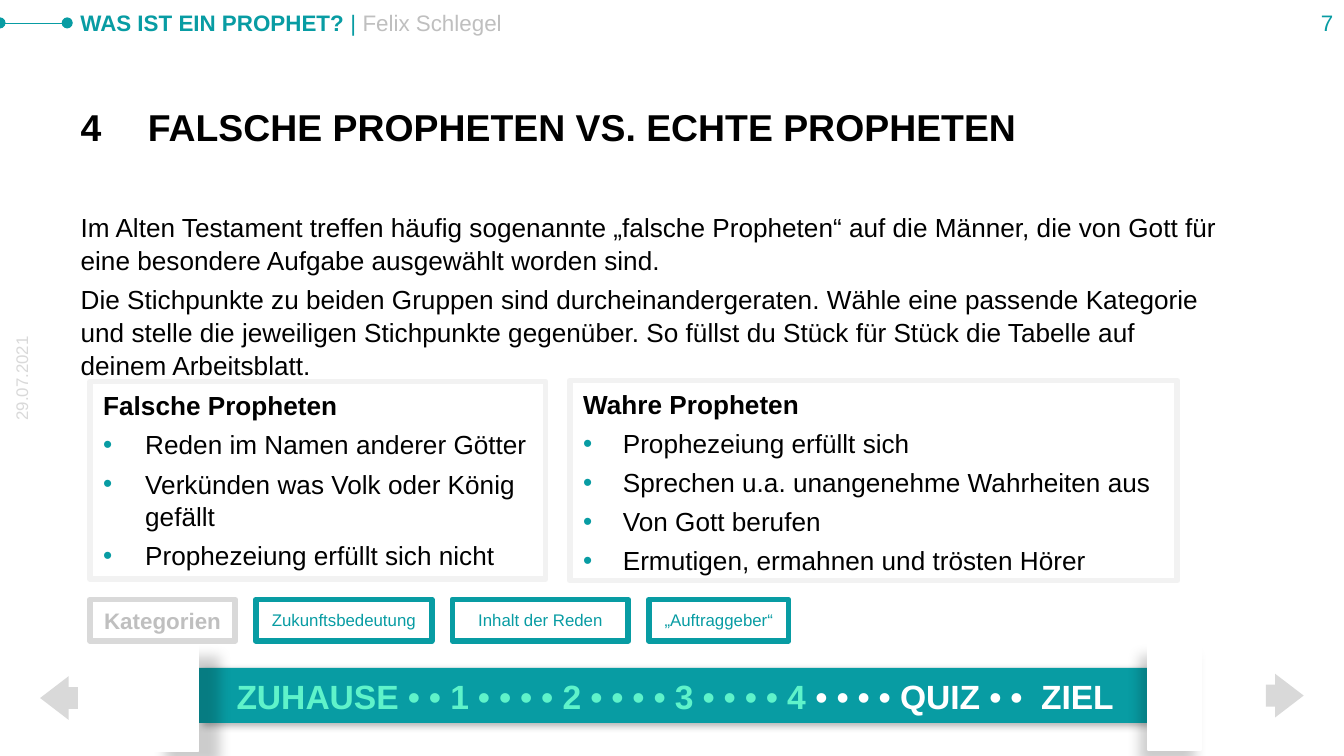
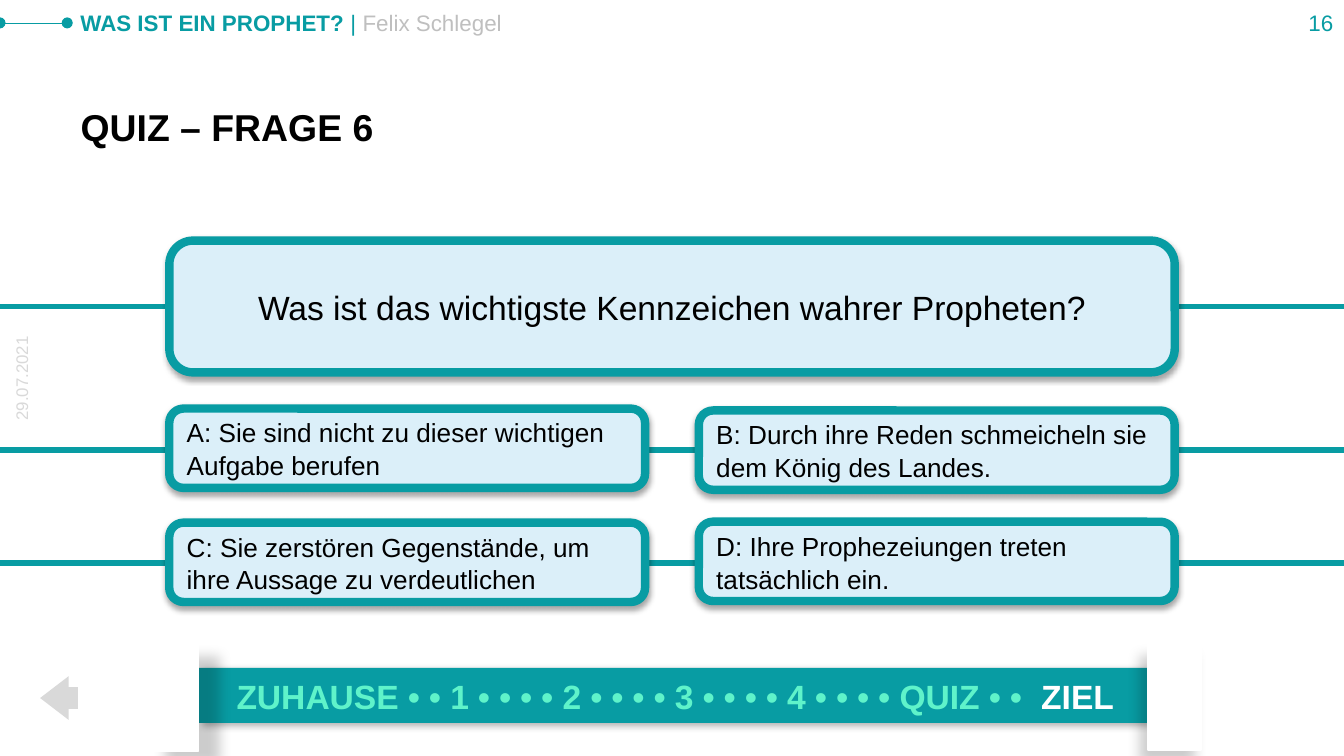
"""Build two slides of a lesson on prophets: a comparison and a quiz question."""
from lxml import etree
from pptx import Presentation
from pptx.dml.color import RGBColor
from pptx.enum.shapes import MSO_CONNECTOR, MSO_SHAPE
from pptx.enum.text import MSO_ANCHOR, MSO_AUTO_SIZE, PP_ALIGN
from pptx.oxml.ns import qn
from pptx.util import Pt

LEFT, MID, RIGHT = PP_ALIGN.LEFT, PP_ALIGN.CENTER, PP_ALIGN.RIGHT
TOP, CENTER, BOTTOM = MSO_ANCHOR.TOP, MSO_ANCHOR.MIDDLE, MSO_ANCHOR.BOTTOM
RECT, ROUND = MSO_SHAPE.RECTANGLE, MSO_SHAPE.ROUNDED_RECTANGLE
BACK, NEXT = MSO_SHAPE.LEFT_ARROW, MSO_SHAPE.RIGHT_ARROW
STRAIGHT = MSO_CONNECTOR.STRAIGHT
NO_FIT = MSO_AUTO_SIZE.NONE

FONT = "Arial"
COLORS = {
    "teal": "089CA3", "mint": "5FF3CA", "sky": "DBEFF9", "white": "FFFFFF",
    "black": "000000", "gray": "BFBFBF", "light": "D9D9D9", "pale": "F2F2F2",
}


def rgb(name):
    return RGBColor.from_string(COLORS[name])


def add(parent, tag, **attrs):
    return etree.SubElement(parent, qn(tag), attrs)


class Deck:
    """Holds the shared style and the current slide."""

    def __init__(self):
        self.show = Presentation()
        self.show.slide_width, self.show.slide_height = Pt(720), Pt(405)
        self.slide = None

    def start(self, layout, title, page, onward):
        self.slide = self.show.slides.add_slide(self.show.slide_layouts[layout])
        self.frame(page, onward)
        head = self.place(self.slide.shapes.title, (36, 23.8, 648.7, 59.8))
        self.letter(head.text_frame, [title], 20, bold=True, anchor=BOTTOM, tab=36)

    def frame(self, page, onward):
        self.line(0, 12.3, 36, 0.25, dots=True)
        self.text((36, 1.4, 551.5, 21.6), [[
            ("WAS IST EIN PROPHET? ", "teal", True),
            ("| ", "teal", False), ("Felix Schlegel", "gray", False)]], 12)
        date = self.text((-34.6, 197.3, 92.2, 10.8), ["29.07.2021"], 9, "light",
                         align=MID, inset=False)
        date.rotation = 270
        self.shape(RECT, (106.6, 357.8, 508.3, 29.5), "teal", shade=(30, 4, 2, 45))
        self.shape(RECT, (77.8, 345.6, 28.4, 56.9), "white", "white", 0.75,
                   shade=(20, 7, 13, 30))
        cap = self.shape(RECT, (614.9, 344.9, 28.4, 56.9), "white", "white", 0.75,
                         shade=(20, 7, 8, 120))
        cap.rotation = 180
        if onward:
            self.shape(NEXT, (678.2, 360.9, 20.2, 23.5), "light", adjust=(0.5, 0.76))
        self.shape(BACK, (21.5, 362.2, 20.2, 23.5), "light", adjust=(0.5, 0.76))
        self.text((682.6, 5, 31.7, 14.4), [page], 12, "teal", align=RIGHT, inset=False)

    def place(self, item, box):
        item.left, item.top, item.width, item.height = map(Pt, box)
        return item

    def body(self, box, lines, size):
        item = self.place(self.slide.placeholders[1], box)
        self.letter(item.text_frame, lines, size, gap=3.3, pitch=1.05)

    def text(self, box, lines, size, color="black", **style):
        item = self.slide.shapes.add_textbox(*map(Pt, box))
        self.letter(item.text_frame, lines, size, color, **style)
        return item

    def shape(self, kind, box, fill=None, edge=None, width=0, shade=None, adjust=()):
        item = self.slide.shapes.add_shape(kind, *map(Pt, box))
        item.shadow.inherit = False
        for num, value in enumerate(adjust):
            item.adjustments[num] = value
        if fill:
            item.fill.solid()
            item.fill.fore_color.rgb = rgb(fill)
        else:
            item.fill.background()
        if edge:
            item.line.color.rgb = rgb(edge)
            item.line.width = Pt(width)
        else:
            item.line.fill.background()
        if shade:
            alpha, blur, dist, turn = shade
            glow = item._element.spPr.find(qn("a:effectLst"))
            drop = add(glow, "a:outerShdw", blurRad=str(Pt(blur)), dist=str(Pt(dist)),
                       dir=str(turn * 60000), algn="ctr", rotWithShape="0")
            tint = add(drop, "a:srgbClr", val=COLORS["black"])
            add(tint, "a:alpha", val=str(alpha * 1000))
        return item

    def line(self, left, top, right, width, dots=False):
        item = self.slide.shapes.add_connector(
            STRAIGHT, Pt(left), Pt(top), Pt(right), Pt(top))
        item.line.color.rgb = rgb("teal")
        item.line.width = Pt(width)
        props = item._element.spPr
        if dots:
            for tag in ("a:headEnd", "a:tailEnd"):
                add(props.find(qn("a:ln")), tag, type="oval")
        add(props, "a:effectLst")

    def letter(self, frame, lines, size, color="black", bold=False, align=LEFT,
               anchor=TOP, inset=True, gap=0, pitch=None, tab=0, hang=0):
        frame.word_wrap = True
        frame.auto_size = NO_FIT
        frame.vertical_anchor = anchor
        if not inset:
            frame.margin_left = frame.margin_right = 0
            frame.margin_top = frame.margin_bottom = 0
        for num, line in enumerate(lines):
            para = frame.add_paragraph() if num else frame.paragraphs[0]
            props = para._p.get_or_add_pPr()
            self.mark(props, hang if num else 0)
            if tab:
                stops = add(props, "a:tabLst")
                add(stops, "a:tab", pos=str(Pt(tab)), algn="l")
            para.alignment = align
            para.space_before = Pt(gap if num else 0)
            if pitch:
                para.line_spacing = pitch
            if isinstance(line, str):
                para.text = line
                self.font(para.font, size, color, bold or (hang and not num))
            else:
                for words, tint, heavy in line:
                    run = para.add_run()
                    run.text = words
                    self.font(run.font, size, tint, heavy)

    def mark(self, props, hang):
        props.set("marL", str(Pt(hang)))
        props.set("indent", str(-Pt(hang)))
        if hang:
            add(add(props, "a:buClr"), "a:srgbClr", val=COLORS["teal"])
            add(props, "a:buFont", typeface=FONT)
            add(props, "a:buChar", char="•")
        else:
            add(props, "a:buNone")

    def font(self, font, size, color, bold):
        font.name, font.size, font.bold = FONT, Pt(size), bool(bold)
        font.color.rgb = rgb(color)

    def trail(self, done, ahead):
        self.text((110.9, 362.2, 501.8, 21.6),
                  [[(done, "mint", True), (ahead, "white", True)]],
                  18, align=MID, inset=False)

    def panel(self, box, lines, hang):
        item = self.shape(RECT, box, None, "pale", 3)
        self.letter(item.text_frame, lines, 14, gap=3.3, pitch=1.05, hang=hang)

    def button(self, left, width, label, edge="teal", color="teal", size=9, bold=False):
        item = self.shape(RECT, (left, 321.1, width, 22.3), "white", edge, 3)
        self.letter(item.text_frame, [label], size, color, bold, MID, CENTER)

    def card(self, box, words, size=14, align=LEFT):
        item = self.shape(ROUND, box, "sky", "teal", 4.5, (35, 3.1, 1.8, 90), (0.18,))
        self.letter(item.text_frame, [words], size, align=align, anchor=CENTER, pitch=1.05)


def compare(deck):
    deck.start(1, "4\tFALSCHE PROPHETEN VS. ECHTE PROPHETEN", "7", True)
    deck.body((36, 108.7, 625, 95.8), [
        "Im Alten Testament treffen häufig sogenannte „falsche Propheten“ auf die "
        "Männer, die von Gott für eine besondere Aufgabe ausgewählt worden sind.",
        "Die Stichpunkte zu beiden Gruppen sind durcheinandergeraten. Wähle eine "
        "passende Kategorie und stelle die jeweiligen Stichpunkte gegenüber. So "
        "füllst du Stück für Stück die Tabelle auf deinem Arbeitsblatt."], 14)
    deck.trail("ZUHAUSE • • 1 • • • • 2 • • • • 3 • • • • 4", " • • • • QUIZ • •  ZIEL")
    deck.panel((48.2, 204.5, 244.1, 105.8), [
        "Falsche Propheten", "Reden im Namen anderer Götter",
        "Verkünden was Volk oder König gefällt", "Prophezeiung erfüllt sich nicht"], 22.5)
    deck.panel((305.3, 203.8, 325.4, 107.3), [
        "Wahre Propheten", "Prophezeiung erfüllt sich",
        "Sprechen u.a. unangenehme Wahrheiten aus", "Von Gott berufen",
        "Ermutigen, ermahnen und trösten Hörer"], 21.3)
    left, width, gap = 48.2, 77.8, 11
    deck.button(left, width, "Kategorien", "light", "gray", 12, True)
    for label, span in (("Zukunftsbedeutung", 94.3), ("Inhalt der Reden", 94.3),
                        ("„Auftraggeber“", 74.9)):
        left += width + gap
        width = span
        deck.button(left, width, label)


def quiz(deck):
    deck.start(5, "QUIZ – FRAGE 6", "16", False)
    for top in (164.2, 241.2, 301.7):
        deck.line(0, top, 720, 3)
    deck.trail("ZUHAUSE • • 1 • • • • 2 • • • • 3 • • • • 4 • • • • QUIZ • •  ", "ZIEL")
    near, far = 90.7, 374.4
    deck.card((near, 128.9, 538.6, 70.6),
              "Was ist das wichtigste Kennzeichen wahrer Propheten?", 18, MID)
    for left, top, words in (
            (near, 218.9, "A: Sie sind nicht zu dieser wichtigen Aufgabe berufen"),
            (far, 219.9, "B: Durch ihre Reden schmeicheln sie dem König des Landes."),
            (near, 280, "C: Sie zerstören Gegenstände, um ihre Aussage zu verdeutlichen"),
            (far, 279.5, "D: Ihre Prophezeiungen treten tatsächlich ein.")):
        deck.card((left, top, 254.9, 42.5), words)


def main():
    deck = Deck()
    compare(deck)
    quiz(deck)
    deck.show.save("out.pptx")


if __name__ == "__main__":
    main()
